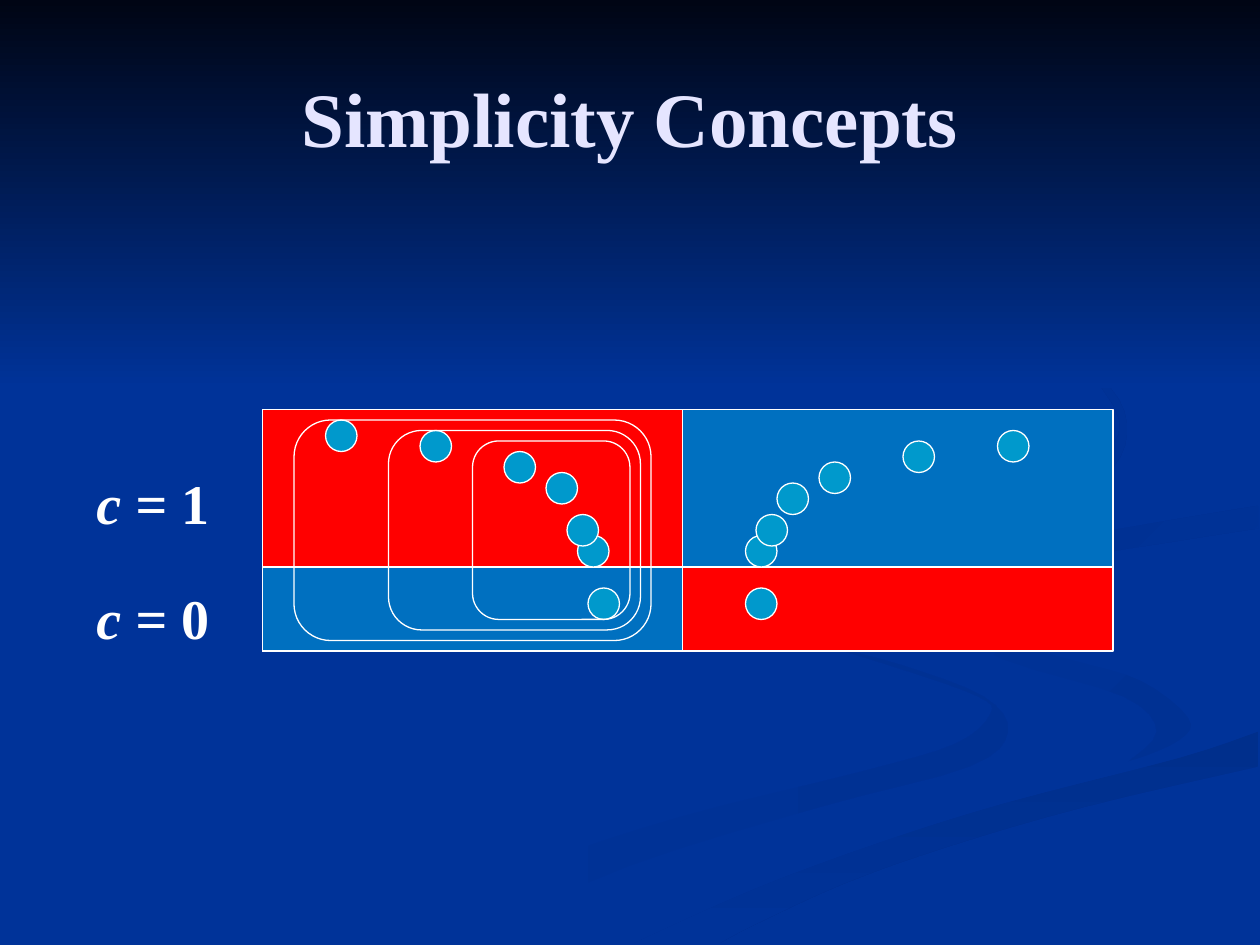
from typing import NamedTuple

from pptx import Presentation
from pptx.dml.color import RGBColor
from pptx.enum.shapes import MSO_SHAPE as Kind
from pptx.enum.text import MSO_ANCHOR as Anchor, MSO_AUTO_SIZE as Fit, PP_ALIGN as Align
from pptx.util import Pt

FONT = "Times New Roman"
BLUE, RED, SKY, DOT, WHITE = "003399", "FF0000", "0070C0", "0099CC", "FFFFFF"

Spot = tuple[float, float]
Edge = list[Spot]


class Box(NamedTuple):
    x: float
    y: float
    w: float
    h: float
    fill: str | None = None


class Blend(NamedTuple):
    first: str
    last: str
    angle: float = 0


class Ribbon(NamedTuple):
    blend: Blend
    edges: list[Edge]  # joined in order around the outline


class Label(NamedTuple):
    y: float
    value: str


def back(edge: Edge) -> Edge:
    return edge[::-1]


# Ribbon edges: a few knots each, rounded off by smooth(); neighbours share edges
STREAM_OUT = [(414, 330), (420, 343), (462, 365), (515, 380), (562, 398), (576, 418),
              (554, 438), (469, 461), (359, 495), (260, 539)]
STREAM_IN = [(414, 330), (410, 340), (433, 356), (514, 382), (559, 398), (566, 408),
             (546, 425), (492, 441), (388, 467), (300, 497), (216, 539)]
TURN = [(521, 334), (528, 348), (557, 362), (612, 377), (652, 389), (679, 410), (674, 423)]
TURN_IN = [(521, 334), (528, 351), (574, 377), (642, 398), (661, 418), (644, 436)]
BANK = TURN + [(642, 436), (562, 456), (477, 481), (413, 506), (343, 539)]
SHORE = [(362, 539), (431, 508), (501, 482), (574, 459), (674, 433), (719, 418)]
SHORE_LOW = [(411, 539), (432, 528), (482, 505), (541, 484), (620, 461), (719, 438)]
CREST = [(719, 289), (647, 301), (592, 312), (562, 331)]
BEND = CREST + [(579, 349), (624, 366), (678, 379), (719, 387)]
RIM = [(719, 279), (629, 294), (567, 304), (527, 321), (521, 334)]
HOOK = CREST + [(570, 344), (595, 357)]
HOOK_IN = [(595, 357), (580, 346), (582, 336), (618, 319), (674, 309), (719, 302)]
LOOP_OUT = [(549, 168), (591, 188), (634, 221), (644, 248), (631, 272), (594, 289),
            (550, 300), (492, 310), (449, 320), (427, 338), (448, 360)]
LOOP_IN = [(549, 168), (609, 201), (640, 241), (620, 266), (570, 282), (487, 298),
           (430, 315), (415, 333), (448, 360)]

RIBBONS = [
    Ribbon(Blend(BLUE, "003193"), [STREAM_OUT, back(STREAM_IN)]),
    Ribbon(Blend(BLUE, "003193", 315), [TURN + [(644, 436)], back(TURN_IN)]),
    Ribbon(Blend("002F8C", BLUE, 270), [SHORE, back(SHORE_LOW)]),
    Ribbon(Blend(BLUE, BLUE), [BANK, SHORE, back(BEND), RIM]),
    Ribbon(Blend("003091", BLUE, 315), [HOOK, HOOK_IN]),
    Ribbon(Blend("002F8E", BLUE, 315), [LOOP_OUT, back(LOOP_IN)]),
]

# Grid: two columns by two rows, with the lower right cell behind its neighbour
LEFT, MID, RIGHT = 150, 390, 636
TOP, SPLIT, BASE = 234, 324, 372
LOW_CELLS = [Box(LEFT, SPLIT, RIGHT - LEFT, BASE - SPLIT, RED),
             Box(LEFT, SPLIT, MID - LEFT, BASE - SPLIT, SKY)]
HIGH_CELLS = [Box(LEFT, TOP, MID - LEFT, SPLIT - TOP, RED),
              Box(MID, TOP, RIGHT - MID, SPLIT - TOP, SKY)]

# Dots: the left arc mirrors the right one, one step higher
STEP, SIZE, MIRROR = 6, 18, 756
ARC = [(516, 252), (570, 246), (468, 264), (444, 276)]
LEFT_ARC = [(MIRROR - x, y - STEP) for x, y in ARC]
FEET = [(426, 306), (432, 294), (330, 306), (324, 294)]
LOW_DOTS = [(336, 336), (426, 336)]

# Rings: each shrinks by one step at the top, right and bottom
RINGS = [Box(x, 240 + STEP * i, 372 - STEP * i - x, 126 - 2 * STEP * i)
         for i, x in enumerate((168, 222, 270))]
LABELS = [Label(330, "0"), Label(264, "1")]


def color(code: str) -> RGBColor:
    return RGBColor.from_string(code)


def smooth(knots: Edge, steps: int = 4) -> Edge:
    """Run a Catmull-Rom curve through the knots."""
    ends = [knots[0], *knots, knots[-1]]
    curve = [knots[0]]
    for a, b, c, d in zip(ends, ends[1:], ends[2:], ends[3:]):
        for t in (i / steps for i in range(1, steps + 1)):
            curve.append(tuple(
                (2 * q + (r - p) * t + (2 * p - 5 * q + 4 * r - s) * t**2
                 + (3 * q - p - 3 * r + s) * t**3) / 2
                for p, q, r, s in zip(a, b, c, d)))
    return curve


def paint(shape, blend: Blend) -> None:
    shape.shadow.inherit = False
    shape.line.fill.background()
    if blend.first == blend.last:
        shape.fill.solid()
        shape.fill.fore_color.rgb = color(blend.first)
        return
    shape.fill.gradient()
    shape.fill.gradient_angle = blend.angle
    for stop, code in zip(shape.fill.gradient_stops, (blend.first, blend.last)):
        stop.color.rgb = color(code)


def draw_ribbon(shapes, item: Ribbon) -> None:
    spots = [spot for edge in item.edges for spot in smooth(edge)]
    unit = 100  # pen units to the point
    dots = [(round(x * unit), round(y * unit)) for x, y in spots]
    pen = shapes.build_freeform(*dots[0], scale=Pt(1) / unit)
    pen.add_line_segments(dots[1:], close=True)
    paint(pen.convert_to_shape(), item.blend)


def add_box(shapes, kind: Kind, box: Box):
    return shapes.add_shape(kind, Pt(box.x), Pt(box.y), Pt(box.w), Pt(box.h))


def draw_box(shapes, kind: Kind, box: Box) -> None:
    shape = add_box(shapes, kind, box)
    shape.shadow.inherit = False
    shape.line.color.rgb = color(WHITE)
    shape.line.width = Pt(0.75)
    if box.fill:
        shape.fill.solid()
        shape.fill.fore_color.rgb = color(box.fill)
    else:
        shape.fill.background()


def style(run, size: float, code: str, italic: bool = False) -> None:
    font = run.font
    font.name, font.size, font.bold, font.italic = FONT, Pt(size), True, italic
    font.color.rgb = color(code)


def add_text(shapes, box: Box, text: str):
    frame = shapes.add_textbox(Pt(box.x), Pt(box.y), Pt(box.w), Pt(box.h)).text_frame
    frame.text = text
    return frame


def draw_title(shapes, text: str) -> None:
    frame = add_text(shapes, Box(36, 21.6, 648, 90), text)
    frame.word_wrap = True
    frame.vertical_anchor = Anchor.MIDDLE
    line = frame.paragraphs[0]
    line.alignment = Align.CENTER
    style(line.runs[0], 44, "E5E5FF")


def draw_label(shapes, item: Label) -> None:
    frame = add_text(shapes, Box(48, item.y, 86, 46), "c = ")
    frame.word_wrap = False
    frame.auto_size = Fit.SHAPE_TO_FIT_TEXT
    line = frame.paragraphs[0]
    line.add_run().text = item.value
    name, value = line.runs
    style(name, 32, WHITE, italic=True)
    style(value, 32, WHITE)


def main() -> None:
    deck = Presentation()
    deck.slide_width, deck.slide_height = Pt(720), Pt(540)
    slide = deck.slides.add_slide(deck.slide_layouts[6])
    shapes = slide.shapes

    # Backdrop: ribbons under a dark band
    slide.background.fill.solid()
    slide.background.fill.fore_color.rgb = color(BLUE)
    for ribbon in RIBBONS:
        draw_ribbon(shapes, ribbon)
    paint(add_box(shapes, Kind.RECTANGLE, Box(0, 0, 720, 222)), Blend("000514", BLUE, 270))

    draw_title(shapes, "Simplicity Concepts")

    # Grid and dots, lower row first
    for cells, spots in ((LOW_CELLS, LOW_DOTS), (HIGH_CELLS, FEET + ARC + LEFT_ARC)):
        for cell in cells:
            draw_box(shapes, Kind.RECTANGLE, cell)
        for x, y in spots:
            draw_box(shapes, Kind.OVAL, Box(x, y, SIZE, SIZE, DOT))

    # Row labels and nested rings
    for label in LABELS:
        draw_label(shapes, label)
    for ring in RINGS:
        draw_box(shapes, Kind.ROUNDED_RECTANGLE, ring)

    deck.save("out.pptx")


if __name__ == "__main__":
    main()
